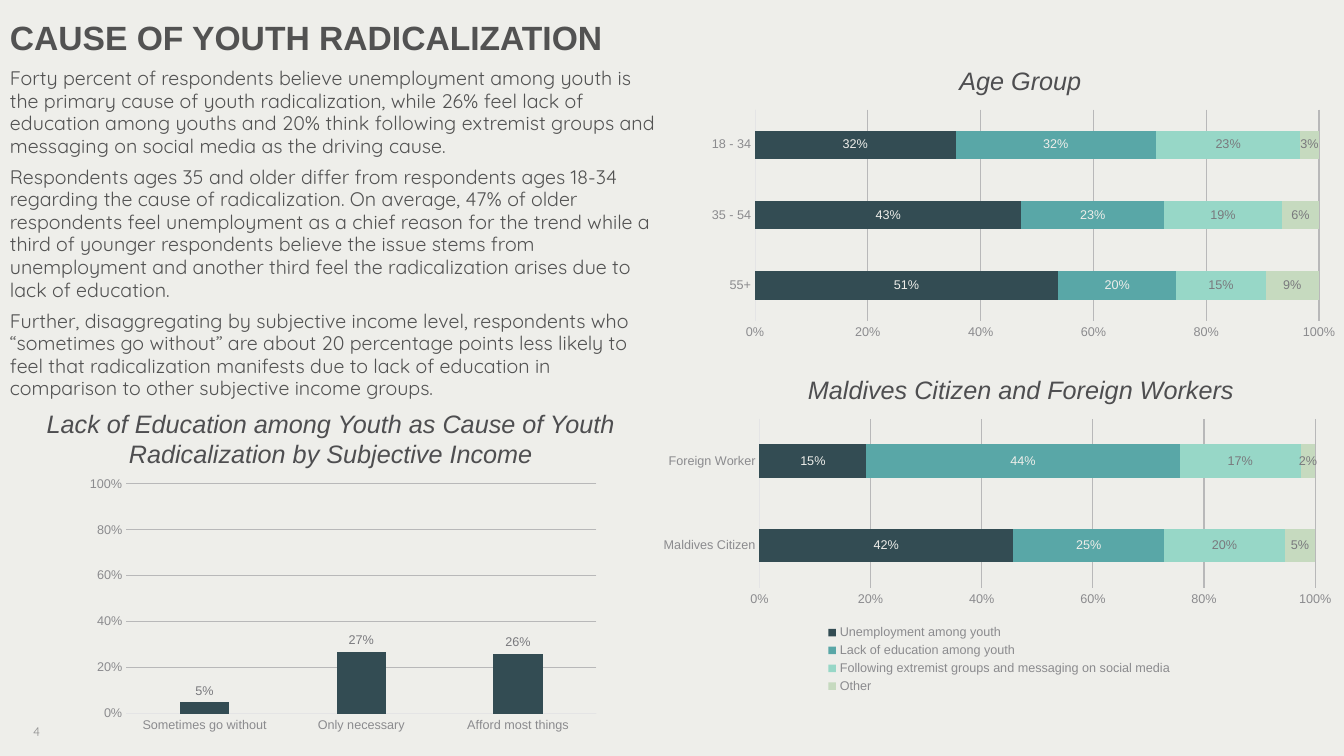
"""Build the slide on the causes of youth radicalization."""
from lxml import etree
from pptx import Presentation
from pptx.chart.data import CategoryChartData
from pptx.dml.color import RGBColor
from pptx.enum.chart import XL_CHART_TYPE, XL_LABEL_POSITION, XL_LEGEND_POSITION, XL_TICK_MARK
from pptx.enum.text import MSO_ANCHOR, PP_ALIGN
from pptx.oxml import parse_xml
from pptx.oxml.ns import nsdecls
from pptx.util import Inches, Pt


def set_font(font, size, color, name="Arial", bold=False, italic=False):
    """Apply size, colour, family and style to a font."""
    font.size, font.name, font.bold, font.italic = Pt(size), name, bold, italic
    font.color.rgb = RGBColor.from_string(color)


def place(element, bounds, inner):
    """Fix a plot area or legend at fractions of its chart."""
    for old in element.findall("{*}layout"):
        element.remove(old)
    target = '<c:layoutTarget val="inner"/>' if inner else ""
    modes = '<c:xMode val="edge"/><c:yMode val="edge"/>'
    sizes = "".join(f'<c:{key} val="{value}"/>' for key, value in zip("xywh", bounds))
    layout = parse_xml(f'<c:layout {nsdecls("c")}><c:manualLayout>{target}{modes}{sizes}'
                       "</c:manualLayout></c:layout>")
    element.insert(0 if inner else 1, layout)


presentation = Presentation()
presentation.slide_width, presentation.slide_height = Inches(13.33), Inches(7.5)
slide = presentation.slides.add_slide(presentation.slide_layouts[6])
slide.background.fill.solid()
slide.background.fill.fore_color.rgb = RGBColor.from_string("EEEEEA")

findings = [
    "Forty percent of respondents believe unemployment among youth is the primary cause of youth "
    "radicalization, while 26% feel lack of education among youths and 20% think following "
    "extremist groups and messaging on social media as the driving cause.",
    "Respondents ages 35 and older differ from respondents ages 18-34 regarding the cause of "
    "radicalization. On average, 47% of older respondents feel unemployment as a chief reason for "
    "the trend while a third of younger respondents believe the issue stems from unemployment and "
    "another third feel the radicalization arises due to lack of education.",
    "Further, disaggregating by subjective income level, respondents who “sometimes go without” "
    "are about 20 percentage points less likely to feel that radicalization manifests due to lack "
    "of education in comparison to other subjective income groups.",
]
body_style = dict(size=14, color="525252", name="Quicksand")
heading_style = dict(size=18, color="4E4E50", italic=True)
texts = [
    ((0, 0.62, 6.67, 3.37), findings, body_style, PP_ALIGN.LEFT, 0.96),
    ((0.23, 7.13, 0.55, 0.36), ["4"], dict(size=9, color="919191", name="Quicksand"),
     PP_ALIGN.LEFT, 1.0),
    ((0, 0, 6.28, 0.79), ["CAUSE OF YOUTH RADICALIZATION"],
     dict(size=24, color="525252", bold=True), PP_ALIGN.LEFT, 0.9),
    ((8.4, 0.6, 3.44, 0.4), ["Age Group"], heading_style, PP_ALIGN.CENTER, 1.0),
    ((7.6, 3.66, 5.05, 0.4), ["Maldives Citizen and Foreign Workers"], heading_style,
     PP_ALIGN.CENTER, 1.0),
    ((0.28, 4, 6, 0.71),
     ["Lack of Education among Youth as Cause of Youth Radicalization by Subjective Income"],
     heading_style, PP_ALIGN.CENTER, 1.0),
]
for bounds, paragraphs, style, alignment, spacing in texts:
    frame = slide.shapes.add_textbox(*map(Inches, bounds)).text_frame
    frame.word_wrap = True
    frame.vertical_anchor = MSO_ANCHOR.MIDDLE if style.get("bold") else MSO_ANCHOR.TOP
    for index, words in enumerate(paragraphs):
        paragraph = frame.add_paragraph() if index else frame.paragraphs[0]
        paragraph.text = words
        paragraph.alignment = alignment
        paragraph.line_spacing = spacing
        paragraph.space_before = Pt(6 if index else 0)
        set_font(paragraph.font, **style)

causes = ["Unemployment among youth", "Lack of education among youth",
          "Following extremist groups and messaging on social media", "Other"]
cause_colors = ["334C53", "59A7A7", "97D7C7", "C6DABF"]
stacked, clustered = XL_CHART_TYPE.BAR_STACKED_100, XL_CHART_TYPE.COLUMN_CLUSTERED
charts = [
    (stacked, (6.91, 1.04, 6.43, 2.38), (0.09, 0.02, 0.87, 0.88), None,
     ["55+", "35 - 54", "18 - 34"],
     [(0.51, 0.43, 0.32), (0.2, 0.23, 0.32), (0.15, 0.19, 0.23), (0.09, 0.06, 0.03)]),
    (stacked, (6.43, 4.1, 6.89, 2.84), (0.16, 0.02, 0.8, 0.59), (0.25, 0.73, 0.51, 0.26),
     ["Maldives Citizen", "Foreign Worker"],
     [(0.42, 0.15), (0.25, 0.44), (0.2, 0.17), (0.05, 0.02)]),
    (clustered, (0.78, 4.67, 5.24, 2.62), (0.09, 0.05, 0.89, 0.87), None,
     ["Sometimes go without", "Only necessary", "Afford most things"],
     [(0.05, 0.27, 0.26)]),
]
for kind, bounds, plot_bounds, legend_bounds, groups, shares in charts:
    data = CategoryChartData(number_format="0%")
    data.categories = groups
    for cause, values in zip(causes, shares):
        data.add_series(cause, values)
    chart = slide.shapes.add_chart(kind, *map(Inches, bounds), data).chart
    set_font(chart.font, 10, "4E4E50")
    chart.has_title = False
    chart.has_legend = legend_bounds is not None
    if legend_bounds:
        chart.legend.position = XL_LEGEND_POSITION.BOTTOM
        chart.legend.include_in_layout = False
        set_font(chart.legend.font, 9, "8B8B8E")
        place(chart.legend._element, legend_bounds, inner=False)
    place(chart._chartSpace.chart.plotArea, plot_bounds, inner=True)

    for axis in (chart.category_axis, chart.value_axis):
        axis.major_tick_mark = axis.minor_tick_mark = XL_TICK_MARK.NONE
        set_font(axis.tick_labels.font, 9, "8B8B8E")
    chart.category_axis.format.line.color.rgb = RGBColor.from_string("E4E4E5")
    chart.category_axis.format.line.width = Pt(0.75)
    shares_axis = chart.value_axis
    shares_axis.minimum_scale, shares_axis.maximum_scale, shares_axis.major_unit = 0, 1, 0.2
    shares_axis.format.line.fill.background()
    shares_axis.tick_labels.number_format = "0%"
    shares_axis.tick_labels.number_format_is_linked = False
    shares_axis.major_gridlines.format.line.color.rgb = RGBColor.from_string("B8B8B9")
    shares_axis.major_gridlines.format.line.width = Pt(0.75)

    plot = chart.plots[0]
    plot.vary_by_categories = False
    plot.gap_width, plot.overlap = (150, 100) if kind == stacked else (219, -27)
    for index, series in enumerate(plot.series):
        series.format.fill.solid()
        series.format.fill.fore_color.rgb = RGBColor.from_string(cause_colors[index])
        labels = series.data_labels
        labels.show_value = True
        labels.number_format, labels.number_format_is_linked = "0%", False
        labels.position = (XL_LABEL_POSITION.CENTER if kind == stacked
                           else XL_LABEL_POSITION.OUTSIDE_END)
        set_font(labels.font, 9, "EEEEEA" if kind == stacked and index < 2 else "79797D")

presentation.save("out.pptx")
